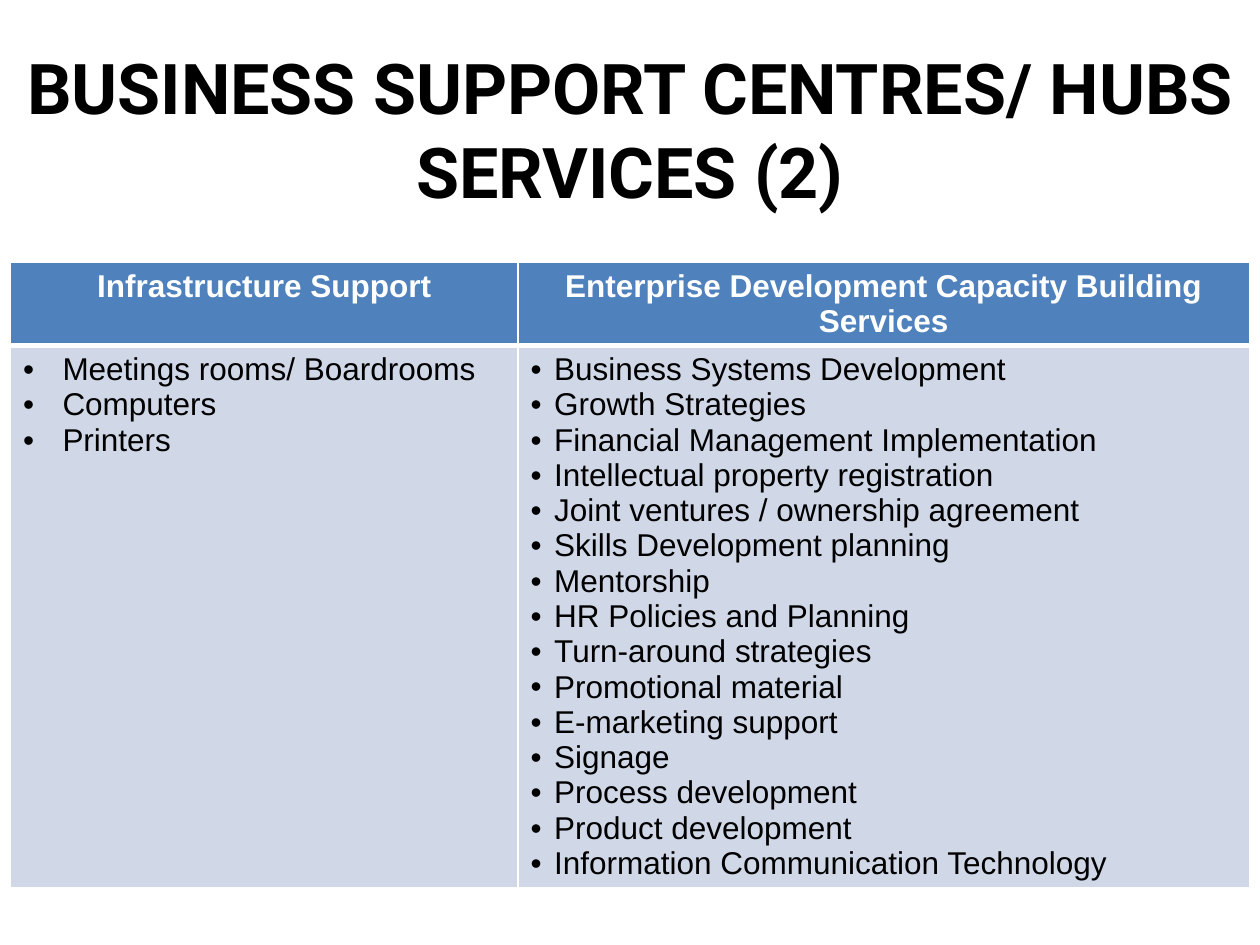
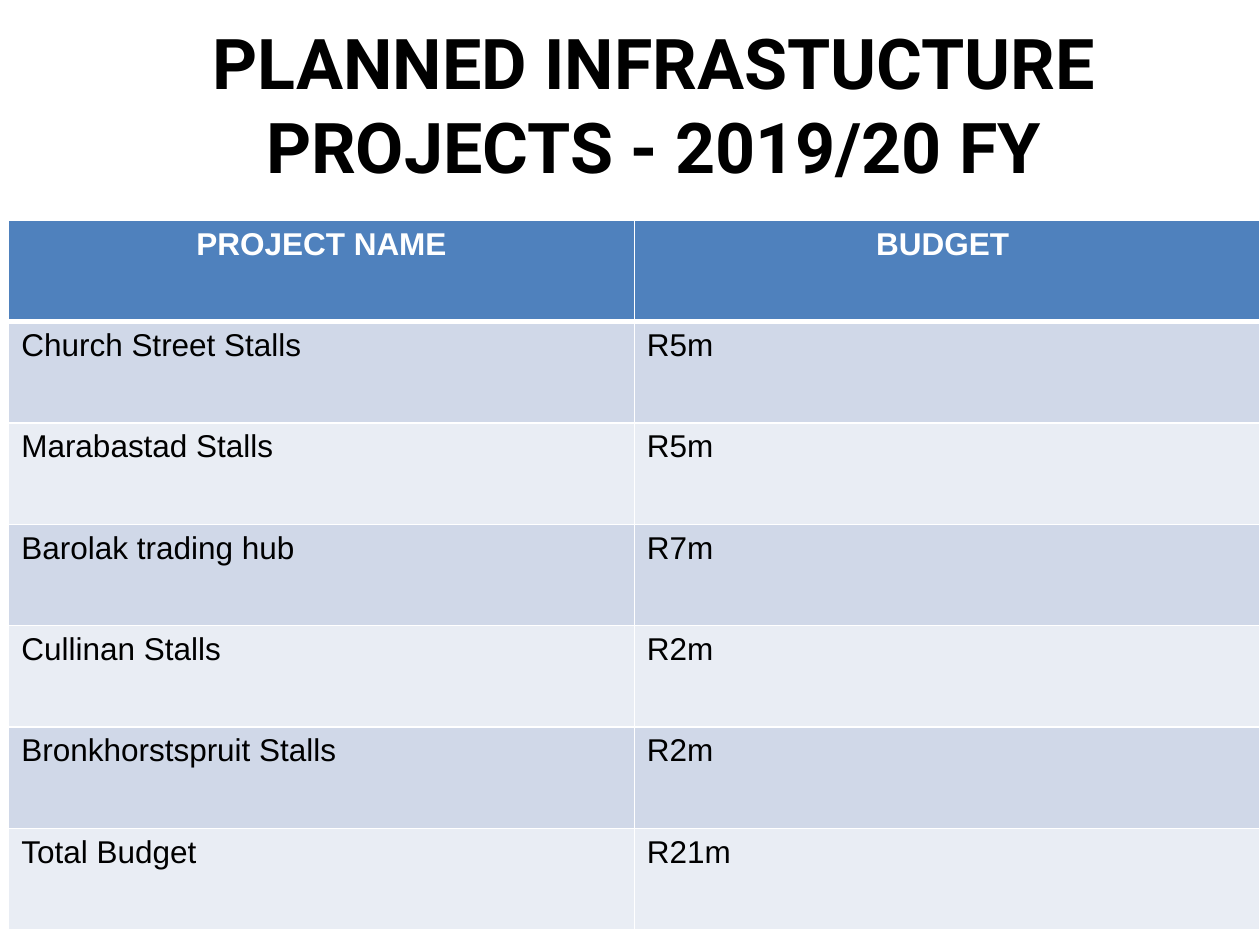
from dataclasses import dataclass

from lxml.etree import SubElement
from pptx import Presentation
from pptx.dml.color import RGBColor
from pptx.enum.text import MSO_ANCHOR, MSO_AUTO_SIZE, PP_ALIGN
from pptx.oxml.ns import qn
from pptx.util import Pt


@dataclass(frozen=True)
class Theme:
    title_font: str = "Roboto"
    table_font: str = "Arial"
    title_size: float = 40
    table_size: float = 18
    black: str = "000000"
    white: str = "FFFFFF"
    header_fill: str = "4F81BD"
    bands: tuple = ("D0D8E8", "E9EDF4")
    border: float = 1
    header_border: float = 3


THEME = Theme()
TITLE_ONLY = 5

SUPPORT_HEADERS = (
    "Infrastructure Support",
    "Enterprise Development Capacity Building Services",
)
INFRASTRUCTURE = ("Meetings rooms/ Boardrooms", "Computers", "Printers")
CAPACITY_BUILDING = (
    "Business Systems Development",
    "Growth Strategies",
    "Financial Management Implementation",
    "Intellectual property registration",
    "Joint ventures / ownership agreement",
    "Skills Development planning",
    "Mentorship",
    "HR Policies and Planning",
    "Turn-around strategies",
    "Promotional material",
    "E-marketing support",
    "Signage",
    "Process development",
    "Product development",
    "Information Communication Technology",
)
BULLET_INDENTS = (22.5, 13.5)

PROJECT_ROWS = (
    ("PROJECT NAME", "BUDGET "),
    ("Church Street Stalls", "R5m"),
    ("Marabastad Stalls", "R5m"),
    ("Barolak trading hub", "R7m"),
    ("Cullinan Stalls", "R2m"),
    ("Bronkhorstspruit Stalls", "R2m"),
    ("Total Budget", "R21m"),
)


def add_run(paragraph, text, font, size, color, bold):
    run = paragraph.add_run()
    run.text = text
    run.font.name = font
    run.font.size = Pt(size)
    run.font.bold = bold
    run.font.color.rgb = RGBColor.from_string(color)


def add_titled_slide(presentation, title, left, top, width, height):
    slide = presentation.slides.add_slide(presentation.slide_layouts[TITLE_ONLY])
    shape = slide.shapes.title
    shape.left, shape.top = Pt(left), Pt(top)
    shape.width, shape.height = Pt(width), Pt(height)
    frame = shape.text_frame
    frame.word_wrap = True
    frame.auto_size = MSO_AUTO_SIZE.NONE
    frame.vertical_anchor = MSO_ANCHOR.MIDDLE
    paragraph = frame.paragraphs[0]
    paragraph.alignment = PP_ALIGN.CENTER
    add_run(paragraph, title, THEME.title_font, THEME.title_size, THEME.black, True)
    return slide


def add_bullet(paragraph, indent):
    properties = paragraph._p.get_or_add_pPr()
    properties.set("marL", str(Pt(indent)))
    properties.set("indent", str(-Pt(indent)))
    SubElement(properties, qn("a:buFont"), typeface=THEME.table_font)
    SubElement(properties, qn("a:buChar"), char="•")


def set_borders(cell, top, bottom):
    """Draw white cell edges; call before the fill, which must follow them."""
    properties = cell._tc.get_or_add_tcPr()
    widths = {"L": THEME.border, "R": THEME.border, "T": top, "B": bottom}
    for side, width in widths.items():
        line = SubElement(properties, qn(f"a:ln{side}"), w=str(Pt(width)))
        fill = SubElement(line, qn("a:solidFill"))
        SubElement(fill, qn("a:srgbClr"), val=THEME.white)


def fill_cell(cell, row, lines, indent):
    is_header = row == 0
    set_borders(
        cell,
        THEME.header_border if row == 1 else THEME.border,
        THEME.header_border if is_header else THEME.border,
    )
    color = THEME.header_fill if is_header else THEME.bands[(row - 1) % 2]
    cell.fill.solid()
    cell.fill.fore_color.rgb = RGBColor.from_string(color)
    frame = cell.text_frame
    for index, text in enumerate(lines):
        paragraph = frame.add_paragraph() if index else frame.paragraphs[0]
        if is_header:
            paragraph.alignment = PP_ALIGN.CENTER
        elif indent:
            add_bullet(paragraph, indent)
        add_run(paragraph, text, THEME.table_font, THEME.table_size,
                THEME.white if is_header else THEME.black, is_header)


def add_grid(slide, left, top, widths, heights, rows, indents=(0, 0)):
    """Add a table; a cell is one string or a tuple of paragraphs."""
    frame = slide.shapes.add_table(
        len(heights), len(widths),
        Pt(left), Pt(top), Pt(sum(widths)), Pt(sum(heights)))
    table = frame.table
    for column, width in zip(table.columns, widths):
        column.width = Pt(width)
    for table_row, height in zip(table.rows, heights):
        table_row.height = Pt(height)
    for row, contents in enumerate(rows):
        for column, content in enumerate(contents):
            lines = (content,) if isinstance(content, str) else content
            fill_cell(table.cell(row, column), row, lines, indents[column])


def add_services_slide(presentation):
    slide = add_titled_slide(
        presentation, "BUSINESS SUPPORT CENTRES/ HUBS SERVICES (2)",
        6, 3, 708, 141)
    add_grid(slide, 6, 150, (290, 418), (47.5, 309.5),
             (SUPPORT_HEADERS, (INFRASTRUCTURE, CAPACITY_BUILDING)),
             BULLET_INDENTS)


def add_projects_slide(presentation):
    slide = add_titled_slide(
        presentation, "PLANNED INFRASTUCTURE PROJECTS - 2019/20 FY",
        36, 14.4, 675, 90)
    add_grid(slide, 5, 126, (357.5,) * 2, (57.9,) * len(PROJECT_ROWS),
             PROJECT_ROWS)


def main():
    presentation = Presentation()
    presentation.slide_width, presentation.slide_height = Pt(720), Pt(540)
    add_services_slide(presentation)
    add_projects_slide(presentation)
    presentation.save("out.pptx")


if __name__ == "__main__":
    main()
